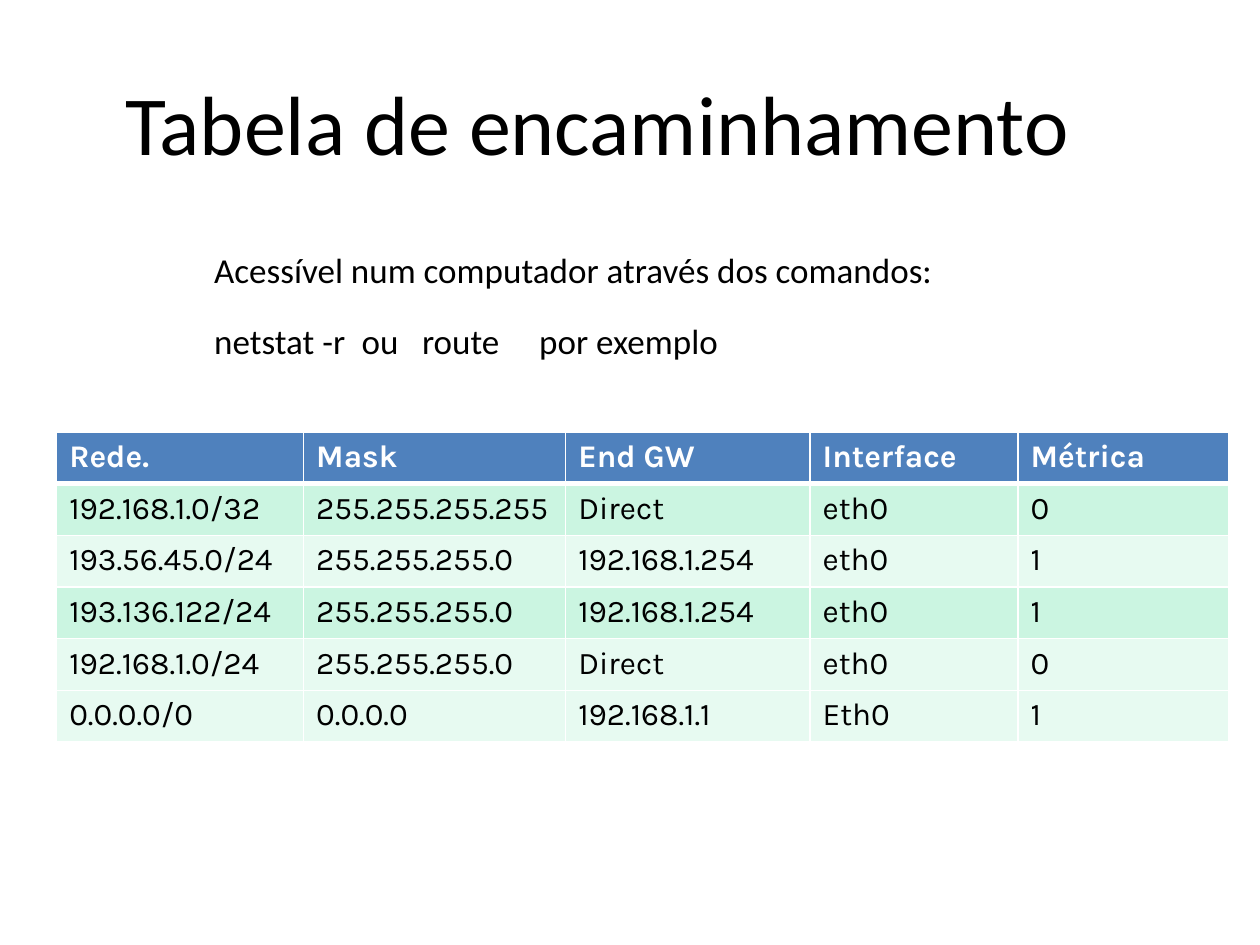
from lxml import etree
from pptx import Presentation, util as u
from pptx.dml.color import RGBColor
from pptx.enum import text
from pptx.oxml.ns import qn

WIDE, HIGH = 10, 7.5
COLS = [1.96, 2.08, 1.94, 1.65, 1.67]
ROW = 0.41
ROUTES = [
    ["Rede.", "Mask", "End GW", "Interface", "Métrica"],
    ["192.168.1.0/32", "255.255.255.255", "Direct", "eth0", "0"],
    ["193.56.45.0/24", "255.255.255.0", "192.168.1.254", "eth0", "1"],
    ["193.136.122/24", "255.255.255.0", "192.168.1.254", "eth0", "1"],
    ["192.168.1.0/24", "255.255.255.0", "Direct", "eth0", "0"],
    ["0.0.0.0/0", "0.0.0.0", "192.168.1.1", "Eth0", "1"],
]
FILLS = ["4F81BD", "CBF5E1", "E7FAF1", "CBF5E1", "E7FAF1", "E7FAF1"]


def color(code):
    return RGBColor.from_string(code)


def style(par, size, face="Calibri", code="000000", bold=False):
    font = par.font
    font.size, font.name, font.bold = u.Pt(size), face, bold
    font.color.rgb = color(code)


def place(shape, left, top, width, height):
    shape.left, shape.top = u.Inches(left), u.Inches(top)
    shape.width, shape.height = u.Inches(width), u.Inches(height)


def add_title(slide, words):
    title = slide.shapes.title
    place(title, 0.32, 0.47, 8.84, 1)
    frame = title.text_frame
    frame.text = words
    frame.vertical_anchor = text.MSO_ANCHOR.MIDDLE
    par = frame.paragraphs[0]
    par.alignment = text.PP_ALIGN.CENTER
    style(par, 48)


def set_tabs(par, stops):
    tabs = etree.Element(qn("a:tabLst"))
    for stop in stops:
        etree.SubElement(tabs, qn("a:tab"), pos=str(u.Inches(stop)), algn="l")
    # Tab stops come before the default font in the schema
    par.font._element.addprevious(tabs)


def add_note(slide, lines, stops):
    box = slide.shapes.add_textbox(0, 0, 0, 0)
    place(box, 1.63, 1.99, 6.64, 0.92)
    frame = box.text_frame
    frame.word_wrap = True
    frame.margin_left = frame.margin_right = u.Inches(0.07)
    frame.margin_top = frame.margin_bottom = u.Inches(0.03)
    frame.text = "\n".join(lines)
    for par in frame.paragraphs:
        par.line_spacing = 0.85
        style(par, 20)
    last = frame.paragraphs[-1]
    last.space_before = u.Pt(20.5)
    set_tabs(last, stops)


def set_edge(cell, side, width):
    props = cell._tc.get_or_add_tcPr()
    line = etree.SubElement(props, qn("a:" + side), w=str(u.Pt(width)))
    fill = etree.SubElement(line, qn("a:solidFill"))
    etree.SubElement(fill, qn("a:srgbClr"), val="FFFFFF")


def fill_cell(cell, words, row):
    head = row == 0
    # Borders precede the fill; a thick rule parts header and body
    for side in ("lnL", "lnR", "lnT", "lnB"):
        thick = (row, side) in ((0, "lnB"), (1, "lnT"))
        set_edge(cell, side, 3 if thick else 1)
    cell.fill.solid()
    cell.fill.fore_color.rgb = color(FILLS[row])
    cell.text = words
    style(cell.text_frame.paragraphs[0], 18, "Karla",
          "FFFFFF" if head else "000000", head)


def add_grid(slide, rows):
    frame = slide.shapes.add_table(
        len(rows), len(COLS), u.Inches(0.45), u.Inches(3.43),
        u.Inches(sum(COLS)), u.Inches(ROW * len(rows)))
    table = frame.table
    table.horz_banding = False
    for col, width in zip(table.columns, COLS):
        col.width = u.Inches(width)
    for r, row in enumerate(rows):
        for c, words in enumerate(row):
            fill_cell(table.cell(r, c), words, r)


def main():
    deck = Presentation()
    deck.slide_width, deck.slide_height = u.Inches(WIDE), u.Inches(HIGH)
    slide = deck.slides.add_slide(deck.slide_layouts[5])
    add_title(slide, "Tabela de encaminhamento")
    # Commands that show the table
    add_note(slide, ["Acessível num computador através dos comandos:",
                     "netstat -r\tou\troute\tpor exemplo"],
             [1.17, 1.65, 2.58])
    # Routing table
    add_grid(slide, ROUTES)
    deck.save("out.pptx")


if __name__ == "__main__":
    main()
